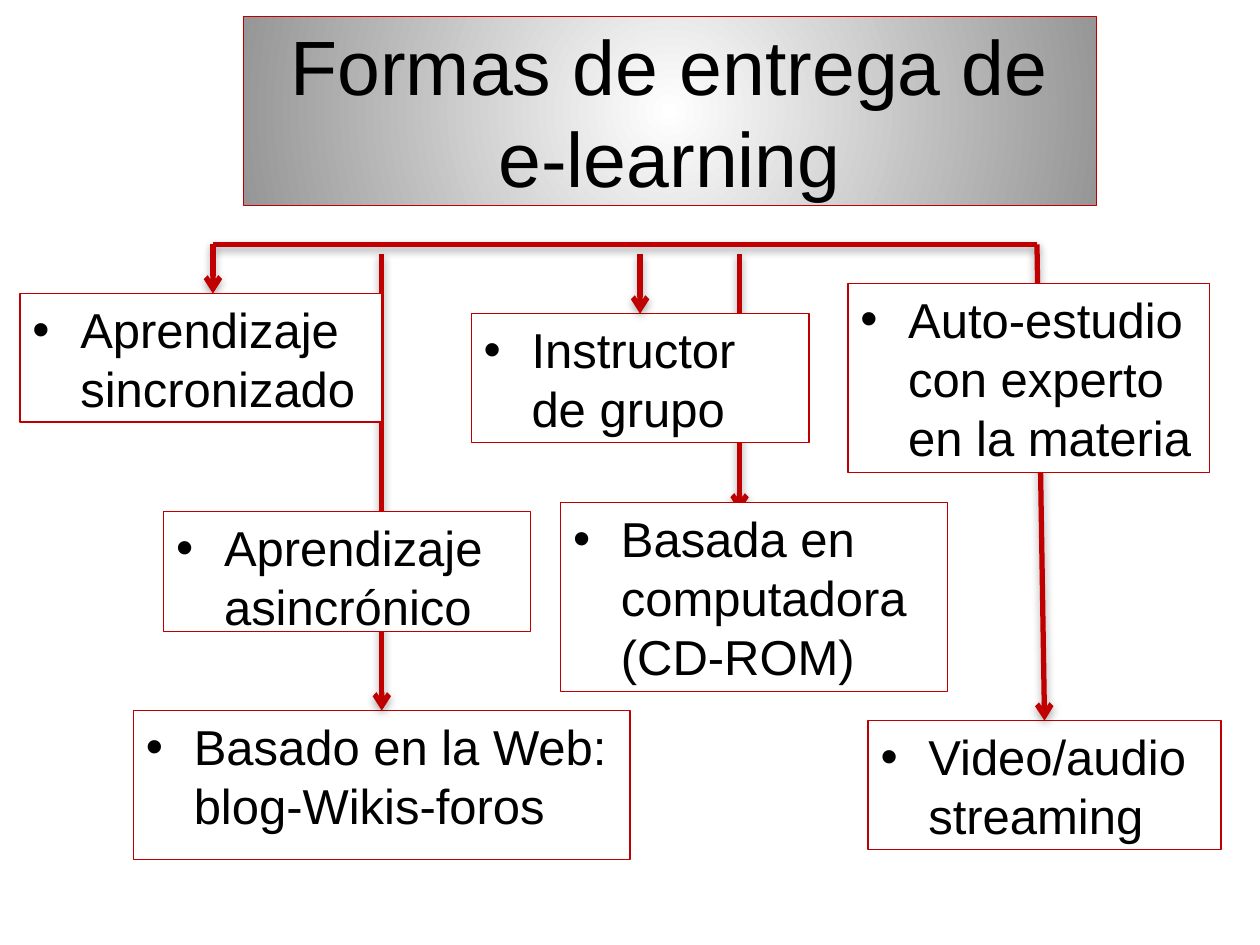
from lxml import etree
from pptx import Presentation
from pptx.dml.color import RGBColor
from pptx.enum.shapes import MSO_CONNECTOR, MSO_SHAPE
from pptx.enum.text import MSO_ANCHOR, MSO_AUTO_SIZE, PP_ALIGN
from pptx.oxml import parse_xml
from pptx.oxml.ns import qn
from pptx.util import Inches, Pt

RECTANGLE = MSO_SHAPE.RECTANGLE
STRAIGHT = MSO_CONNECTOR.STRAIGHT
TOP, MIDDLE = MSO_ANCHOR.TOP, MSO_ANCHOR.MIDDLE
LEFT, CENTER = PP_ALIGN.LEFT, PP_ALIGN.CENTER
NO_AUTOFIT = MSO_AUTO_SIZE.NONE
TOP_SITE = 0
TITLE_ONLY = 5

RED = RGBColor(0xC0, 0x00, 0x00)
WHITE = RGBColor(0xFF, 0xFF, 0xFF)
BLACK = RGBColor(0x00, 0x00, 0x00)
GRAY = RGBColor(0x96, 0x96, 0x96)
FONT = "Arial"
NAMESPACE = 'xmlns:a="http://schemas.openxmlformats.org/drawingml/2006/main"'
RADIAL_FILL = f"""<a:gradFill {NAMESPACE} rotWithShape="1"><a:gsLst>
<a:gs pos="0"><a:srgbClr val="{WHITE}"/></a:gs>
<a:gs pos="100000"><a:srgbClr val="{GRAY}"/></a:gs></a:gsLst>
<a:path path="circle"><a:fillToRect l="50000" t="50000" r="50000" b="50000"/></a:path>
</a:gradFill>"""
SOFT_SHADOW = f"""<a:effectLst {NAMESPACE}>
<a:outerShdw blurRad="63500" dist="22860" dir="5400000" rotWithShape="0">
<a:srgbClr val="{BLACK}"><a:alpha val="35000"/></a:srgbClr></a:outerShdw></a:effectLst>"""

BRANCH_TOP = 2.02
BAR_TOP = 1.94
BAR_LEFT, BAR_RIGHT = 1.69, 8.23


def write_text(shape, text, size, alignment, anchor):
    """Write one black paragraph into a shape and return it."""
    frame = shape.text_frame
    frame.word_wrap = True
    frame.auto_size = NO_AUTOFIT
    frame.vertical_anchor = anchor
    paragraph = frame.paragraphs[0]
    paragraph.alignment = alignment
    run = paragraph.add_run()
    run.text = text
    run.font.name = FONT
    run.font.size = Pt(size)
    run.font.color.rgb = BLACK
    return paragraph


def outline(shape):
    """Give a shape the thin red border."""
    shape.line.color.rgb = RED
    shape.line.width = Pt(0.75)


def place_title(slide, left, top, width, height):
    """Move and format the title with its radial gradient."""
    title = slide.shapes.title
    title.left, title.top = Inches(left), Inches(top)
    title.width, title.height = Inches(width), Inches(height)
    title._element.spPr.append(parse_xml(RADIAL_FILL))
    outline(title)
    write_text(title, "Formas de entrega de e-learning", 44, CENTER, MIDDLE)


def add_form(slide, text, left, top, width, height):
    """Add one bulleted delivery form in a bordered box."""
    form = slide.shapes.add_shape(
        RECTANGLE, Inches(left), Inches(top), Inches(width), Inches(height))
    form.shadow.inherit = False
    form.fill.solid()
    form.fill.fore_color.rgb = WHITE
    outline(form)
    properties = write_text(form, text, 28, LEFT, TOP)._p.get_or_add_pPr()
    properties.set("marL", str(Inches(0.38)))
    properties.set("indent", str(-Inches(0.38)))
    spacing = etree.SubElement(properties, qn("a:spcBef"))
    etree.SubElement(spacing, qn("a:spcPct"), val="20000")
    etree.SubElement(properties, qn("a:buFont"), typeface=FONT)
    etree.SubElement(properties, qn("a:buChar"), char="•")
    return form


def add_branch(slide, start, end, target=None, arrow=True):
    """Add a red line, joined to the top of its target when given."""
    branch = slide.shapes.add_connector(
        STRAIGHT, *(Inches(length) for length in (*start, *end)))
    if target is not None:
        branch.end_connect(target, TOP_SITE)
    branch.line.color.rgb = RED
    branch.line.width = Pt(3)
    if arrow:
        etree.SubElement(branch.line._get_or_add_ln(), qn("a:tailEnd"), type="arrow")
    branch._element.spPr.append(parse_xml(SOFT_SHADOW))


def build_diagram(slide):
    """Place the delivery forms and the branches leading to them."""
    add_branch(slide, (5.87, BRANCH_TOP), (5.87, 4.06))
    web = add_form(slide, "Basado en la Web: blog-Wikis-foros", 1.06, 5.64, 3.94, 1.18)
    video = add_form(slide, "Video/audio streaming", 6.89, 5.72, 2.8, 1.02)
    instructor = add_form(slide, "Instructor de grupo", 3.74, 2.49, 2.68, 1.02)

    add_branch(slide, (3.03, BRANCH_TOP), (3.03, 5.64), web)
    add_branch(slide, (5.08, BRANCH_TOP), (5.08, 2.49), instructor)
    add_branch(slide, (BAR_LEFT, BAR_TOP), (BAR_RIGHT, BAR_TOP), arrow=False)
    add_branch(slide, (BAR_LEFT, BAR_TOP), (BAR_LEFT, 2.33))
    add_branch(slide, (BAR_RIGHT, BAR_TOP), (8.29, 5.72), video)

    for text, *box in (
        ("Aprendizaje asincrónico", 1.3, 4.06, 2.91, 0.95),
        ("Basada en computadora (CD-ROM)", 4.45, 3.99, 3.07, 1.5),
        ("Aprendizaje sincronizado", 0.16, 2.33, 2.87, 1.02),
        ("Auto-estudio con experto en la materia", 6.73, 2.25, 2.87, 1.5),
    ):
        add_form(slide, text, *box)


def main():
    """Build and save the presentation."""
    presentation = Presentation()
    presentation.slide_width = Inches(10)
    presentation.slide_height = Inches(7.5)
    slide = presentation.slides.add_slide(presentation.slide_layouts[TITLE_ONLY])
    place_title(slide, 1.93, 0.13, 6.77, 1.5)
    build_diagram(slide)
    presentation.save("out.pptx")


if __name__ == "__main__":
    main()
